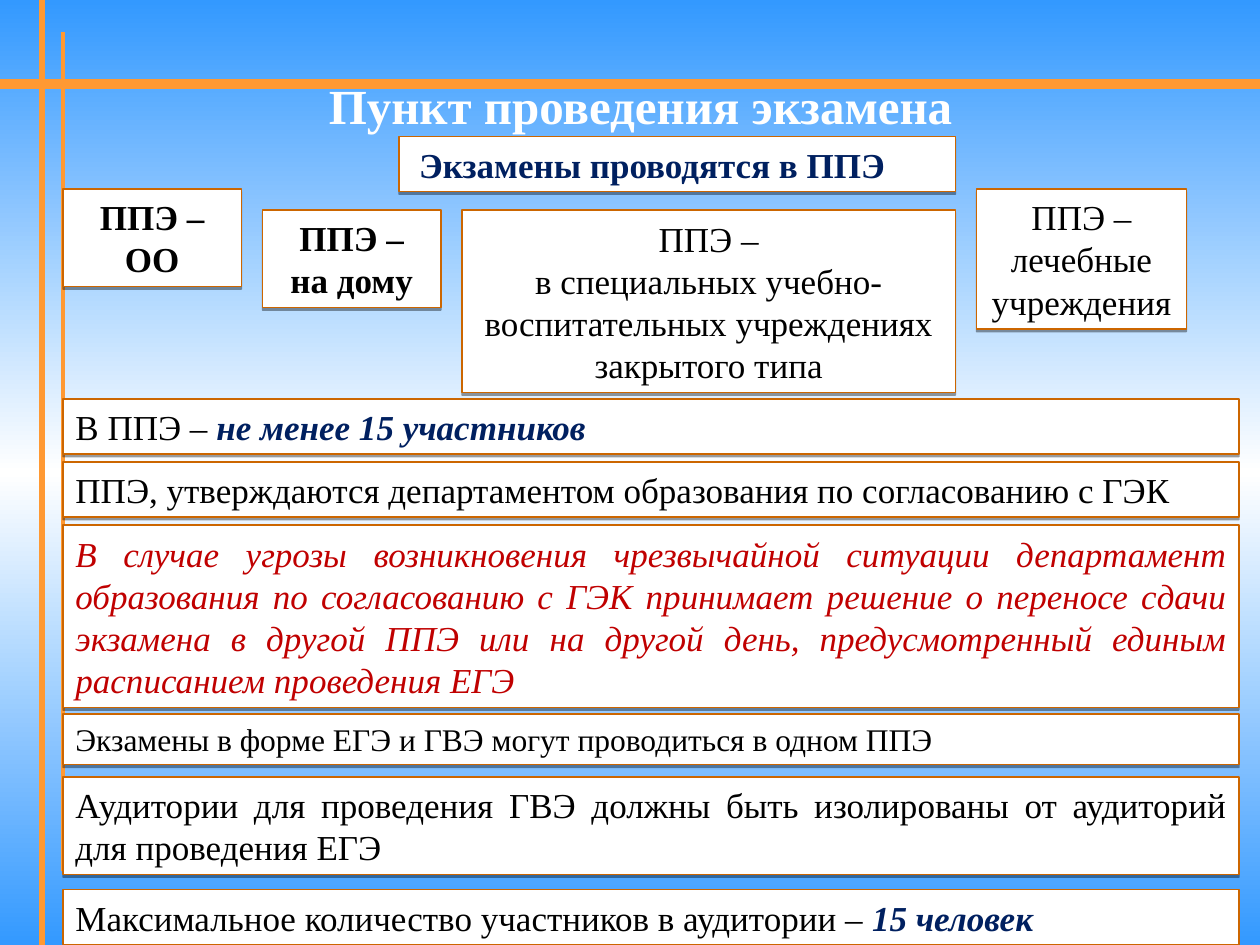
from copy import deepcopy
from dataclasses import dataclass

from lxml import etree
from pptx import Presentation
from pptx.dml.color import RGBColor
from pptx.enum.shapes import MSO_CONNECTOR, MSO_SHAPE
from pptx.enum.text import MSO_ANCHOR, MSO_AUTO_SIZE, PP_ALIGN
from pptx.oxml.ns import qn
from pptx.util import Inches, Pt

STRAIGHT = MSO_CONNECTOR.STRAIGHT
RECTANGLE = MSO_SHAPE.RECTANGLE
MIDDLE = MSO_ANCHOR.MIDDLE
GROW, FIXED = MSO_AUTO_SIZE.SHAPE_TO_FIT_TEXT, MSO_AUTO_SIZE.NONE
CENTER, JUSTIFY = PP_ALIGN.CENTER, PP_ALIGN.JUSTIFY

FONT = "Times New Roman"
COLORS = {
    "sky": "3399FF",
    "white": "FFFFFF",
    "rail": "FF9933",
    "border": "CC6600",
    "text": "000000",
    "accent": "002060",
    "warning": "C00000",
}
COLUMNS, ROWS = 120, 90
SLIDE_WIDTH, SLIDE_HEIGHT = Inches(10), Inches(7.5)
LINE_HEIGHT = 1.213
INSET = 0.1
WIDE_COLUMN, WIDE_SPAN = 6, 112


@dataclass
class Span:
    text: str
    color: str = "text"
    bold: bool = False
    italic: bool = False


@dataclass
class Card:
    column: float
    row: float
    span: float
    lines: int
    paragraphs: list[list[Span]]
    align: PP_ALIGN = CENTER
    size: int = 20
    left_inset: float = INSET


@dataclass
class Rail:
    start: tuple[float, float]
    end: tuple[float, float]
    weight: float


def across(columns: float) -> int:
    return round(SLIDE_WIDTH * columns / COLUMNS)


def down(rows: float) -> int:
    return round(SLIDE_HEIGHT * rows / ROWS)


def rgb(name: str) -> RGBColor:
    return RGBColor.from_string(COLORS[name])


def statement(row: float, lines: int, *spans: Span, size: int = 20) -> Card:
    return Card(WIDE_COLUMN, row, WIDE_SPAN, lines, [list(spans)], JUSTIFY, size)


def add_span(paragraph, span: Span, size: int) -> None:
    run = paragraph.add_run()
    run.text = span.text
    run.font.name = FONT
    run.font.size = Pt(size)
    run.font.bold = span.bold
    run.font.italic = span.italic
    run.font.color.rgb = rgb(span.color)


def add_shadow(card_shape) -> None:
    effects = etree.SubElement(card_shape.element.spPr, qn("a:effectLst"))
    shadow = etree.SubElement(effects, qn("a:outerShdw"), blurRad="0",
                              dist=str(Pt(1.6)), dir="5400000", rotWithShape="0")
    shade = etree.SubElement(shadow, qn("a:srgbClr"), val=COLORS["text"])
    etree.SubElement(shade, qn("a:alpha"), val="38000")


def draw_card(slide, card: Card) -> None:
    height = Inches(2 * INSET / 2 + card.lines * card.size * LINE_HEIGHT / 72)
    box = slide.shapes.add_shape(RECTANGLE, across(card.column), down(card.row),
                                 across(card.span), height)
    box.fill.solid()
    box.fill.fore_color.rgb = rgb("white")
    box.line.color.rgb = rgb("border")
    box.line.width = Pt(0.75)
    add_shadow(box)
    frame = box.text_frame
    frame.word_wrap = True
    frame.auto_size = GROW
    frame.margin_left = Inches(card.left_inset)
    for index, spans in enumerate(card.paragraphs):
        paragraph = frame.add_paragraph() if index else frame.paragraphs[0]
        paragraph.alignment = card.align
        for span in spans:
            add_span(paragraph, span, card.size)


def draw_rail(slide, rail: Rail) -> None:
    (x1, y1), (x2, y2) = rail.start, rail.end
    line = slide.shapes.add_connector(STRAIGHT, across(x1), down(y1), across(x2), down(y2))
    line.line.color.rgb = rgb("rail")
    line.line.width = Pt(rail.weight)
    etree.SubElement(line.element.spPr, qn("a:effectLst"))
    slide.shapes.title.element.addprevious(line.element)


def paint_background(slide) -> None:
    fill = slide.background.fill
    fill.gradient()
    fill.gradient_angle = 270
    first, last = fill.gradient_stops
    first.color.rgb = last.color.rgb = rgb("sky")
    first.position, last.position = 0, 1
    stops = slide.element.find(".//" + qn("a:gsLst"))
    stops.insert(1, deepcopy(stops[0]))
    middle = fill.gradient_stops[1]
    middle.color.rgb = rgb("white")
    middle.position = 0.5


def write_title(slide, text: str) -> None:
    title = slide.shapes.title
    title.left, title.top = across(5), down(8)
    title.width, title.height = across(112), down(4)
    frame = title.text_frame
    frame.word_wrap = True
    frame.auto_size = FIXED
    frame.vertical_anchor = MIDDLE
    heading = frame.paragraphs[0]
    heading.alignment = CENTER
    add_span(heading, Span(text, "white", bold=True), 28)


RAILS = [
    Rail((0, 8), (COLUMNS, 8), 6),
    Rail((4, 0), (4, ROWS), 3),
    Rail((6, 3), (6, 83), 2.25),
]

CARDS = [
    Card(38, 13, 53, 1, [[Span("Экзамены проводятся в ППЭ", "accent", bold=True)]],
         JUSTIFY, left_inset=0.16),
    Card(6, 18, 17, 2, [[Span("ППЭ – ОО", bold=True)]]),
    Card(25, 20, 17, 2, [[Span("ППЭ –", bold=True)], [Span("на дому", bold=True)]]),
    Card(44, 20, 47, 4, [
        [Span("ППЭ –")],
        [Span("в специальных учебно-воспитательных учреждениях закрытого типа")],
    ]),
    Card(93, 18, 20, 3, [[Span("ППЭ –")], [Span("лечебные учреждения")]]),
    statement(38, 1, Span("В ППЭ – "),
              Span("не менее 15 участников", "accent", bold=True, italic=True)),
    statement(44, 1, Span("ППЭ, утверждаются департаментом образования по согласованию с ГЭК")),
    statement(50, 4, Span(
        "В случае угрозы возникновения чрезвычайной ситуации департамент образования "
        "по согласованию с ГЭК принимает решение о переносе сдачи экзамена в другой ППЭ "
        "или на другой день, предусмотренный единым расписанием проведения ЕГЭ",
        "warning", italic=True)),
    statement(68, 1, Span("Экзамены в форме ЕГЭ и ГВЭ могут проводиться в одном ППЭ"), size=18),
    statement(74, 2, Span("Аудитории для проведения ГВЭ должны быть изолированы "
                          "от аудиторий для проведения ЕГЭ")),
    statement(84.75, 1, Span("Максимальное количество участников в аудитории – "),
              Span("15 человек", "accent", bold=True, italic=True)),
]


def main() -> None:
    deck = Presentation()
    deck.slide_width, deck.slide_height = SLIDE_WIDTH, SLIDE_HEIGHT
    slide = deck.slides.add_slide(deck.slide_layouts[5])
    paint_background(slide)
    for rail in RAILS:
        draw_rail(slide, rail)
    write_title(slide, "Пункт проведения экзамена")
    for card in CARDS:
        draw_card(slide, card)
    deck.save("out.pptx")


if __name__ == "__main__":
    main()
